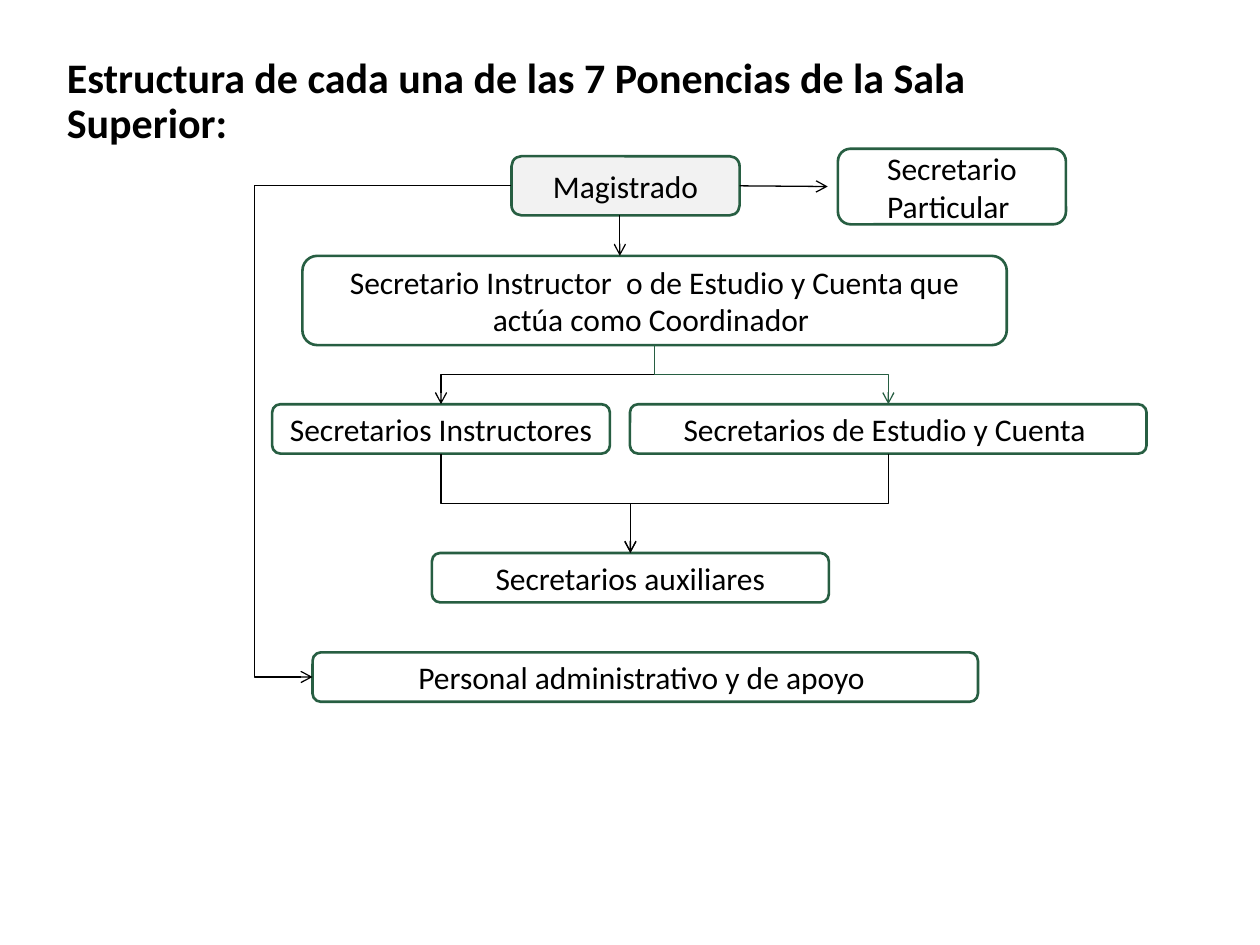
"""Build the organisation chart of a Ponencia of the Sala Superior."""
from pptx import Presentation
from pptx.dml.color import RGBColor
from pptx.enum.shapes import MSO_CONNECTOR, MSO_SHAPE
from pptx.enum.text import MSO_ANCHOR, MSO_AUTO_SIZE, PP_ALIGN
from pptx.oxml.ns import qn
from pptx.oxml.xmlchemy import OxmlElement
from pptx.util import Pt

BLACK, GREEN, GRAY = "000000", "275E42", "F2F2F2"


def color(hex_string):
    """Return the colour for a hex string."""
    return RGBColor.from_string(hex_string)


def style_arrow(connector, line_color):
    """Give a connector a thin line, an open arrowhead and no shadow."""
    connector.line.color.rgb = color(line_color)
    connector.line.width = Pt(0.75)
    arrowhead = OxmlElement("a:tailEnd")
    arrowhead.set("type", "arrow")
    connector.line._get_or_add_ln().append(arrowhead)
    connector._element.spPr.append(OxmlElement("a:effectLst"))


presentation = Presentation()
presentation.slide_width, presentation.slide_height = Pt(720), Pt(540)
slide = presentation.slides.add_slide(presentation.slide_layouts[5])

title = slide.shapes.title
title.left, title.top, title.width, title.height = Pt(31), Pt(28.8), Pt(589.7), Pt(59.8)
title.text_frame.text = "Estructura de cada una de las 7 Ponencias de la Sala Superior:"
title.text_frame.word_wrap = True
title.text_frame.auto_size = MSO_AUTO_SIZE.NONE
title.text_frame.vertical_anchor = MSO_ANCHOR.TOP
paragraph = title.text_frame.paragraphs[0]
paragraph.alignment = PP_ALIGN.LEFT
paragraph.line_spacing = 0.9
paragraph.font.name = "Calibri"
paragraph.font.size = Pt(24)
paragraph.font.bold = True
paragraph.font.color.rgb = color(BLACK)

positions = {
    "Magistrado": (292.3, 89.3, 130.3, 33.8),
    "Secretario Particular ": (478.8, 85, 130.3, 43.2),
    "Secretario Instructor  o de Estudio y Cuenta que actúa como Coordinador ": (172.8, 146.2, 402.5, 51),
    "Secretarios Instructores ": (155.5, 231, 193, 28.2),
    "Secretarios de Estudio y Cuenta ": (360, 231, 295.2, 28.2),
    "Secretarios auxiliares": (246.8, 316, 226.8, 28.2),
    "Personal administrativo y de apoyo ": (178.6, 372.8, 380.2, 28.2),
}
boxes = []
for text, position in positions.items():
    shape = slide.shapes.add_shape(MSO_SHAPE.ROUNDED_RECTANGLE, *map(Pt, position))
    shape.shadow.inherit = False
    shape.fill.background()
    shape.line.color.rgb = color(GREEN)
    shape.line.width = Pt(1.5)
    shape.text_frame.text = text
    shape.text_frame.word_wrap = True
    shape.text_frame.vertical_anchor = MSO_ANCHOR.MIDDLE
    paragraph = shape.text_frame.paragraphs[0]
    paragraph.alignment = PP_ALIGN.CENTER
    paragraph.font.name = "Calibri"
    paragraph.font.size = Pt(18)
    paragraph.font.color.rgb = color(BLACK)
    boxes.append(shape)
magistrado, particular, coordinador, instructores, estudio, auxiliares, personal = boxes
magistrado.fill.solid()
magistrado.fill.fore_color.rgb = color(GRAY)

down_arrow = slide.shapes.add_connector(
    MSO_CONNECTOR.STRAIGHT, Pt(354.2), Pt(123.1), Pt(354.2), Pt(146.2))
style_arrow(down_arrow, BLACK)

for upper, lower, line_color in [
    (coordinador, instructores, BLACK),
    (coordinador, estudio, GREEN),
    (instructores, auxiliares, BLACK),
    (estudio, auxiliares, BLACK),
]:
    elbow = slide.shapes.add_connector(MSO_CONNECTOR.ELBOW, 0, 0, 0, 0)
    elbow.begin_connect(upper, 2)
    elbow.end_connect(lower, 0)
    center_x = (elbow.begin_x + elbow.end_x) // 2
    center_y = (elbow.begin_y + elbow.end_y) // 2
    goes_right = elbow.end_x > elbow.begin_x
    elbow.width, elbow.height = elbow.height, elbow.width
    elbow.left = center_x - elbow.width // 2
    elbow.top = center_y - elbow.height // 2
    transform = elbow._element.spPr.find(qn("a:xfrm"))
    transform.set("rot", str((270 if goes_right else 90) * 60000))
    transform.set("flipH", "1" if goes_right else "0")
    transform.set("flipV", "0")
    style_arrow(elbow, line_color)

side_arrow = slide.shapes.add_connector(MSO_CONNECTOR.ELBOW, 0, 0, 0, 0)
side_arrow.begin_connect(magistrado, 1)
side_arrow.end_connect(personal, 1)
bend = OxmlElement("a:gd")
bend.set("name", "adj1")
bend.set("fmla", "val 129100")
side_arrow._element.spPr.find(qn("a:prstGeom")).get_or_add_avLst().append(bend)
style_arrow(side_arrow, BLACK)

right_arrow = slide.shapes.add_connector(
    MSO_CONNECTOR.STRAIGHT, Pt(422.6), Pt(106.2), Pt(473), Pt(106.6))
right_arrow.begin_connect(magistrado, 3)
style_arrow(right_arrow, BLACK)

presentation.save("out.pptx")
